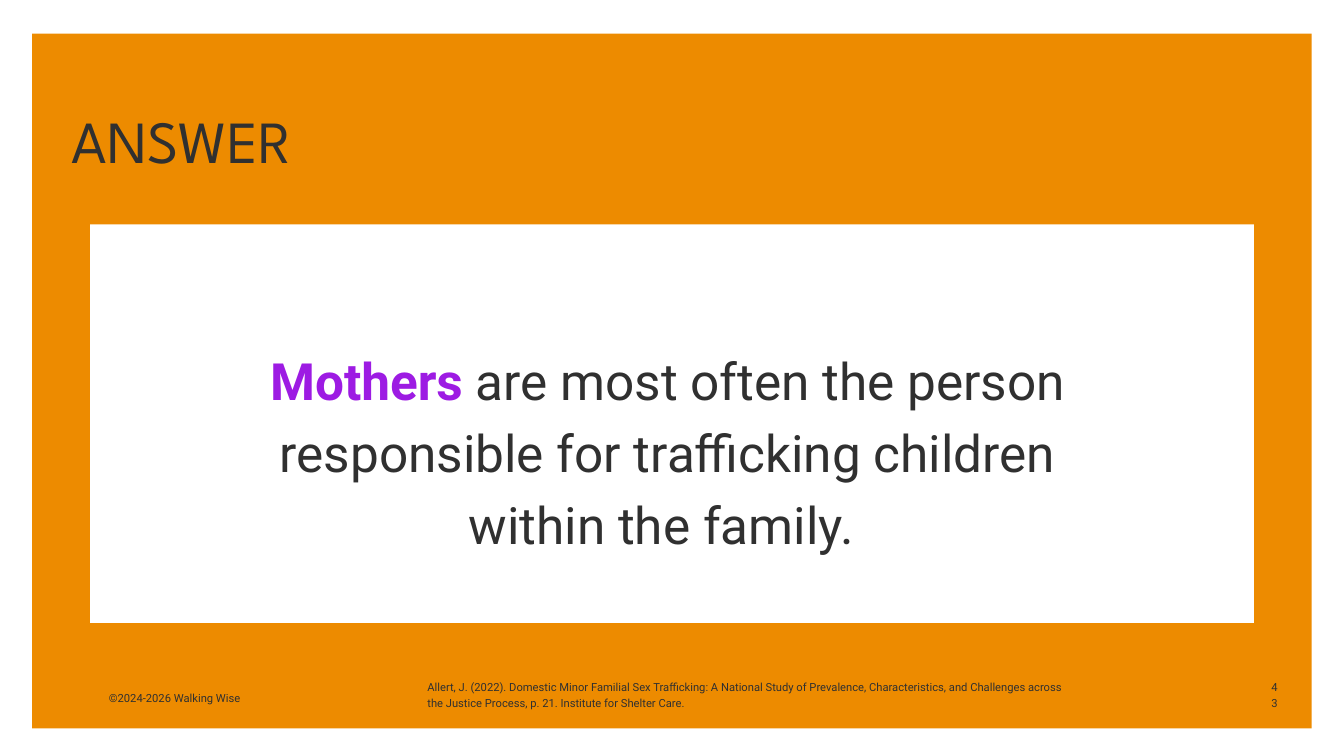
from pptx import Presentation
from pptx.dml.color import RGBColor
from pptx.enum import shapes, text
from pptx.util import Inches, Pt

ORANGE, WHITE, INK, PURPLE = "ED8B00", "FFFFFF", "303030", "9D1BE3"
LEFT, CENTER = text.PP_ALIGN.LEFT, text.PP_ALIGN.CENTER

PANELS = [
    ((0.48, 0.5, 19.04, 10.34), ORANGE),
    ((1.34, 3.34, 17.32, 5.93), WHITE),
]
TITLE = ((1.07, 1.37, 10, 1.2), "ANSWER")
ANSWER = (
    (3.32, 5.05, 13.23, 3.15),
    [
        ("Mothers", PURPLE, True),
        (" are most often the person responsible for trafficking children "
         "within the family. ", INK, False),
    ],
)
FOOTERS = [
    ((18.88, 10.09, 0.17, 0.5), "43", CENTER),
    ((1.62, 10.25, 2.58, 0.23), "©2024-2026 Walking Wise", LEFT),
    ((6.36, 10.09, 9.62, 0.69),
     "Allert, J. (2022). Domestic Minor Familial Sex Trafficking: A National "
     "Study of Prevalence, Characteristics, and Challenges across the Justice "
     "Process, p. 21. Institute for Shelter Care.", LEFT),
]


def rgb(value):
    return RGBColor.from_string(value)


def add_panel(s, box, color):
    sp = s.shapes.add_shape(shapes.MSO_SHAPE.RECTANGLE, *map(Inches, box))
    sp.shadow.inherit = False
    sp.fill.solid()
    sp.fill.fore_color.rgb = rgb(color)
    sp.line.fill.background()


def write(sp, box, runs, size, leading, font="Roboto", align=LEFT):
    sp.left, sp.top, sp.width, sp.height = map(Inches, box)
    tf = sp.text_frame
    tf.word_wrap = True
    tf.auto_size = text.MSO_AUTO_SIZE.NONE
    tf.vertical_anchor = text.MSO_ANCHOR.TOP
    tf.margin_left = tf.margin_top = tf.margin_right = tf.margin_bottom = 0
    p = tf.paragraphs[0]
    p.alignment = align
    p.line_spacing = Pt(leading)
    p.space_before = Pt(0)
    for words, color, bold in runs:
        r = p.add_run()
        r.text = words
        r.font.name = font
        r.font.size = Pt(size)
        r.font.bold = bold
        r.font.color.rgb = rgb(color)


def add_text(s, box, runs, **fmt):
    write(s.shapes.add_textbox(*map(Inches, box)), box, runs, **fmt)


def main():
    prs = Presentation()
    prs.slide_width, prs.slide_height = Inches(20), Inches(11.25)
    s = prs.slides.add_slide(prs.slide_layouts[5])
    for box, color in PANELS:
        add_panel(s, box, color)

    box, runs = ANSWER
    add_text(s, box, runs, size=55, leading=77, align=CENTER)
    for box, words, align in FOOTERS:
        add_text(s, box, [(words, INK, False)], size=12, leading=16.8, align=align)

    title = s.shapes.title
    box, words = TITLE
    write(title, box, [(words, INK, False)], size=64, leading=89.6,
          font="League Spartan")
    s.shapes._spTree.append(title._element)
    prs.save("out.pptx")


if __name__ == "__main__":
    main()
